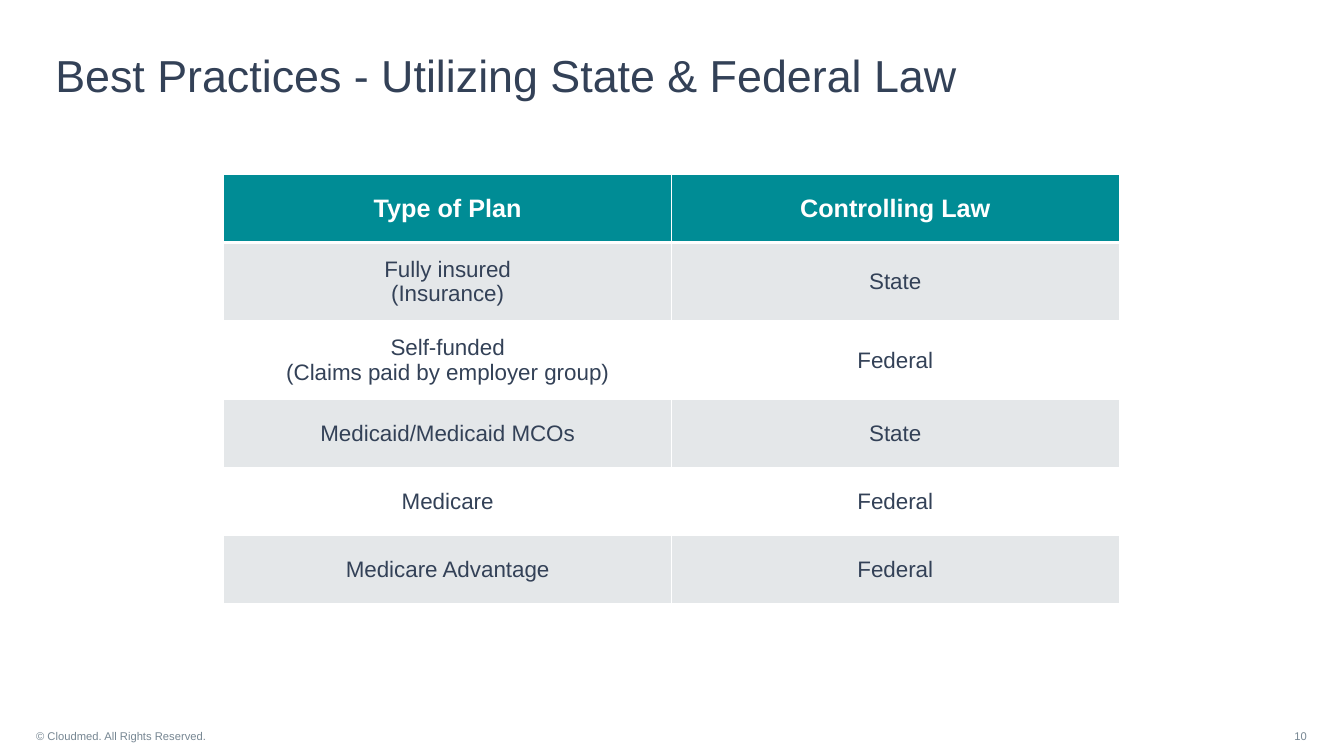
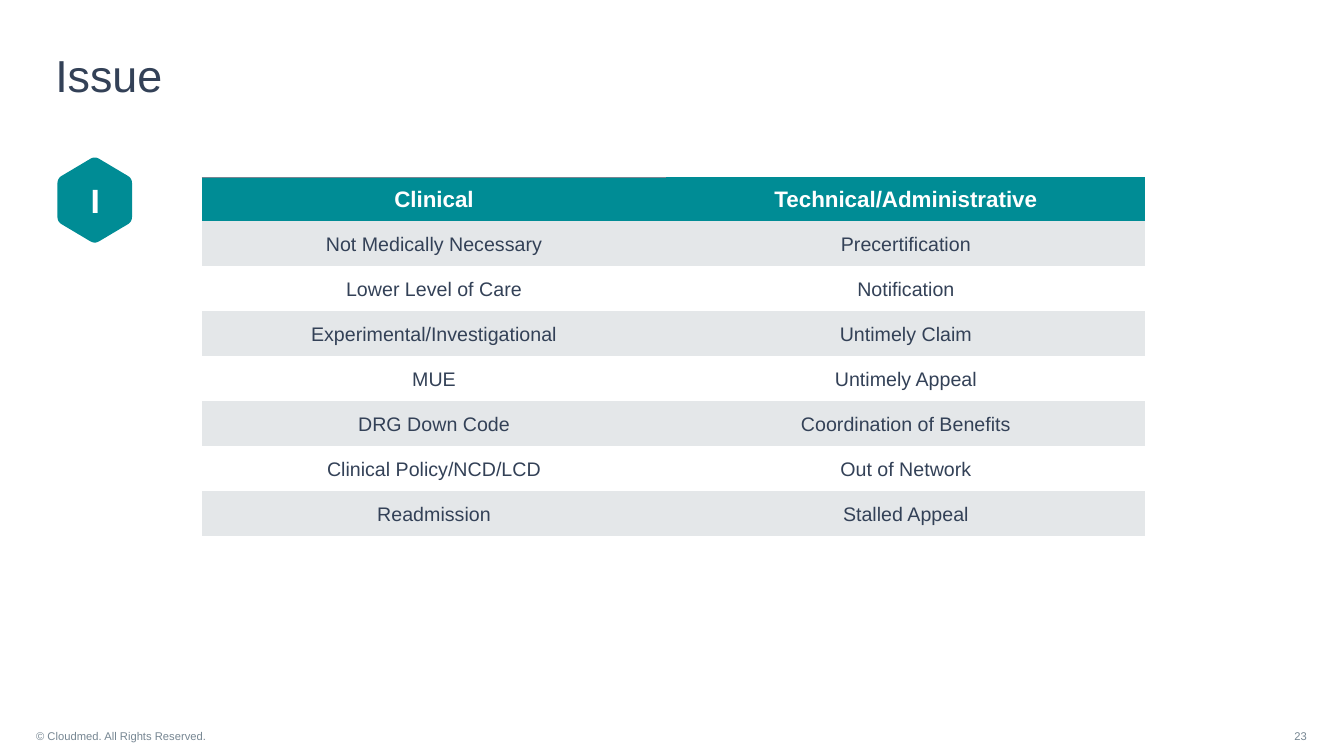
import math

from lxml import etree
from pptx import Presentation
from pptx import util as u
from pptx.dml.color import RGBColor
from pptx.enum import text
from pptx.oxml import ns

EMU_PER_PX = 9144  # 100 px to the inch
FONT = "Arial"
COLORS = {
    "teal": "008C95",
    "navy": "334157",
    "slate": "768692",
    "band": "E4E7E9",
    "white": "FFFFFF",
}
NO_STYLE_NO_GRID = "{2D5ABB26-0587-4C30-8999-92F81FD0307C}"

# Text styles: size, colour, bold
STYLES = {
    "title": (32, "navy", False),
    "footer": (8, "slate", False),
    "badge": (24, "white", True),
    "plan head": (18, "white", True),
    "plan body": (16, "navy", False),
    "issue head": (16, "white", True),
    "issue body": (14, "navy", False),
}

PLANS = [
    ("Type of Plan", "Controlling Law"),
    ("Fully insured\n(Insurance)", "State"),
    ("Self-funded\n(Claims paid by employer group)", "Federal"),
    ("Medicaid/Medicaid MCOs", "State"),
    ("Medicare", "Federal"),
    ("Medicare Advantage", "Federal"),
]
ISSUES = [
    ("Clinical", "Technical/Administrative"),
    ("Not Medically Necessary", "Precertification"),
    ("Lower Level of Care", "Notification"),
    ("Experimental/Investigational", "Untimely Claim"),
    ("MUE", "Untimely Appeal"),
    ("DRG Down Code", "Coordination of Benefits"),
    ("Clinical Policy/NCD/LCD", "Out of Network"),
    ("Readmission", "Stalled Appeal"),
]


def px(length):
    return u.Emu(round(length * EMU_PER_PX))


def color(name):
    return RGBColor.from_string(COLORS[name])


def set_attributes(target, values):
    for name, value in values.items():
        setattr(target, name, value)


def write(frame, content, style, align=text.PP_ALIGN.LEFT, spacing=None):
    """Put each line of content in its own paragraph."""
    size, color_name, bold = STYLES[style]
    frame.text = content
    for paragraph in frame.paragraphs:
        set_attributes(paragraph, {"alignment": align, "line_spacing": spacing})
        for run in paragraph.runs:
            set_attributes(run.font, {"name": FONT, "size": u.Pt(size), "bold": bold})
            run.font.color.rgb = color(color_name)


def add_text(slide, box, content, style, anchor=text.MSO_ANCHOR.TOP, wrap=True, **layout):
    frame = slide.shapes.add_textbox(*map(px, box)).text_frame
    set_attributes(frame, {"word_wrap": wrap, "vertical_anchor": anchor})
    write(frame, content, style, **layout)


def add_base(presentation, title, number):
    """Blank slide with the shared title and footer."""
    slide = presentation.slides.add_slide(presentation.slide_layouts[6])
    middle = text.MSO_ANCHOR.MIDDLE
    add_text(slide, (26, 710, 259, 40), "© Cloudmed. All Rights Reserved.", "footer", middle)
    add_text(slide, (1242, 710, 64, 40), str(number), "footer", middle,
             align=text.PP_ALIGN.RIGHT)
    add_text(slide, (45, 48, 977, 62), title, "title", spacing=0.9)
    return slide


def add_borders(cell, borders):
    """Borders map a side (L, R, T, B, in that order) to colour and points."""
    properties = cell._tc.get_or_add_tcPr()
    for side, (color_name, points) in borders.items():
        line = etree.SubElement(properties, ns.qn(f"a:ln{side}"), w=str(u.Pt(points)))
        fill = etree.SubElement(line, ns.qn("a:solidFill"))
        etree.SubElement(fill, ns.qn("a:srgbClr"), val=COLORS[color_name])


def add_banded_table(slide, box, rows, columns, fixed_heights, style, borders, margins=None):
    """Teal header over banded rows; rows without a fixed height share the rest."""
    table = slide.shapes.add_table(len(rows), len(columns), *map(px, box)).table
    set_attributes(table, {"first_row": False, "horz_banding": False})
    table._tbl.tblPr.find(ns.qn("a:tableStyleId")).text = NO_STYLE_NO_GRID
    for column, width in zip(table.columns, columns):
        column.width = px(width)
    shared = (box[3] - sum(fixed_heights.values())) / (len(rows) - len(fixed_heights))

    for r, values in enumerate(rows):
        table.rows[r].height = px(fixed_heights.get(r, shared))
        part = "body" if r else "head"
        fill = "teal" if r == 0 else "band" if r % 2 else "white"
        for c, content in enumerate(values):
            cell = table.cell(r, c)
            set_attributes(cell, {"vertical_anchor": text.MSO_ANCHOR.MIDDLE, **(margins or {})})
            write(cell.text_frame, content, f"{style} {part}", text.PP_ALIGN.CENTER)
            add_borders(cell, borders(r, c))
            cell.fill.solid()
            cell.fill.fore_color.rgb = color(fill)


def plan_borders(row, column):
    """White grid with a heavier rule under the header."""
    widths = {"L": 1, "R": 1, "T": 3 if row == 1 else 1, "B": 3 if row == 0 else 1}
    return {side: ("white", points) for side, points in widths.items()}


def issue_borders(row, column):
    return {"T": ("slate", 1)} if (row, column) == (0, 0) else {}


def rounded_outline(corners, cut, steps=6):
    """Points of a polygon whose corners are eased by quadratic curves."""
    points = []
    for i, corner in enumerate(corners):
        start, end = [
            [a + (b - a) * cut / math.dist(corner, other) for a, b in zip(corner, other)]
            for other in (corners[i - 1], corners[(i + 1) % len(corners)])
        ]
        for step in range(steps + 1):
            t = step / steps
            points.append([
                (1 - t) ** 2 * s + 2 * t * (1 - t) * m + t ** 2 * e
                for s, m, e in zip(start, corner, end)
            ])
    return [(px(x), px(y)) for x, y in points]


def add_badge(slide, letter):
    corners = [(94, 155), (131, 177), (131, 220), (94, 242), (57, 220), (57, 177)]
    first, *rest = rounded_outline(corners, cut=5)
    builder = slide.shapes.build_freeform(*first)
    builder.add_line_segments(rest, close=True)
    hexagon = builder.convert_to_shape()
    hexagon.shadow.inherit = False
    hexagon.fill.solid()
    hexagon.fill.fore_color.rgb = color("teal")
    hexagon.line.fill.background()
    add_text(slide, (80, 174, 29, 50), letter, "badge", wrap=False,
             align=text.PP_ALIGN.CENTER)


def main():
    presentation = Presentation()
    set_attributes(presentation, {"slide_width": px(1333), "slide_height": px(750)})

    # Plan types and the law that controls them
    slide = add_base(presentation, "Best Practices - Utilizing State & Federal Law", 10)
    add_banded_table(slide, (222, 173, 888, 426), PLANS, (444, 444), {1: 78, 2: 78},
                     "plan", plan_borders)

    # Denial issues
    slide = add_base(presentation, "Issue", 23)
    add_badge(slide, "I")
    margins = {f"margin_{side}": px(2) for side in ("left", "top", "right")}
    add_banded_table(slide, (200, 176, 936, 356), ISSUES, (461, 475), {0: 43},
                     "issue", issue_borders, {**margins, "margin_bottom": 0})

    presentation.save("out.pptx")


if __name__ == "__main__":
    main()
